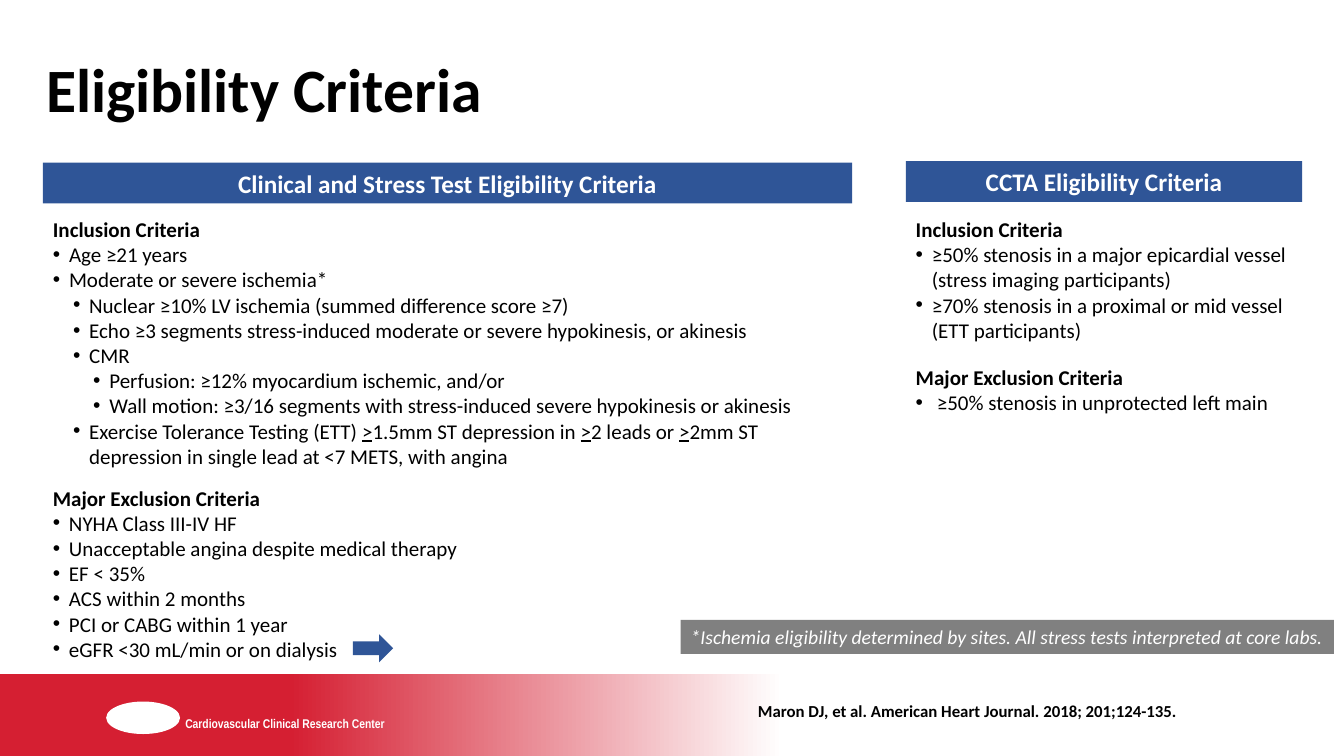
from lxml import etree
from pptx import Presentation
from pptx.dml.color import RGBColor
from pptx.enum.shapes import MSO_SHAPE
from pptx.enum.text import MSO_ANCHOR, PP_ALIGN
from pptx.oxml.ns import qn
from pptx.util import Inches, Pt

WIDE, HIGH = 13.33, 7.5
COL, ROW = WIDE / 100, HIGH / 100
COLORS = {"blue": "2F5597", "gray": "808080", "red": "D51F32",
          "white": "FFFFFF", "black": "000000"}

CLINIC_IN = [
    (0, "Age ≥21 years"),
    (0, "Moderate or severe ischemia*"),
    (1, "Nuclear ≥10% LV ischemia (summed difference score ≥7)"),
    (1, "Echo ≥3 segments stress-induced moderate or severe hypokinesis, or akinesis"),
    (1, "CMR"),
    (2, "Perfusion: ≥12% myocardium ischemic, and/or"),
    (2, "Wall motion: ≥3/16 segments with stress-induced severe hypokinesis or akinesis"),
    (1, "Exercise Tolerance Testing (ETT) _>_1.5mm ST depression in _>_2 leads or "
        "_>_2mm ST depression in single lead at <7 METS, with angina"),
]
CLINIC_OUT = [(0, text) for text in (
    "NYHA Class III-IV HF", "Unacceptable angina despite medical therapy",
    "EF < 35%", "ACS within 2 months", "PCI or CABG within 1 year",
    "eGFR <30 mL/min or on dialysis")]
CCTA_IN = [
    (0, "≥50% stenosis in a major epicardial vessel (stress imaging participants)"),
    (0, "≥70% stenosis in a proximal or mid vessel (ETT participants)"),
]
CCTA_OUT = [(0, "≥50% stenosis in unprotected left main")]


def color(name):
    return RGBColor.from_string(COLORS[name])


def place(box):
    """Turn a box in grid columns and rows into slide lengths."""
    x, y, w, h = box
    return Inches(x * COL), Inches(y * ROW), Inches(w * COL), Inches(h * ROW)


def style(font, size, tint, bold=False, italic=False, face="Calibri"):
    font.name, font.size = face, Pt(size)
    font.bold, font.italic = bold, italic
    font.color.rgb = color(tint)


def add_block(slide, box, fill, kind=MSO_SHAPE.RECTANGLE):
    block = slide.shapes.add_shape(kind, *place(box))
    block.shadow.inherit = False
    block.line.fill.background()
    if fill:
        block.fill.solid()
        block.fill.fore_color.rgb = color(fill)
    return block


def add_text(slide, box):
    frame = slide.shapes.add_textbox(*place(box)).text_frame
    frame.word_wrap = True
    return frame


def write(frame, text, size, tint, align=PP_ALIGN.LEFT, **look):
    frame.text = text
    para = frame.paragraphs[0]
    para.alignment = align
    style(para.runs[0].font, size, tint, **look)
    return para


def add_bullet(para, level, hang):
    props = para._p.get_or_add_pPr()
    props.set("marL", str(Inches(hang + 0.2 * level)))
    props.set("indent", str(Inches(-hang)))
    etree.SubElement(props, qn("a:buFont")).set("typeface", "Arial")
    etree.SubElement(props, qn("a:buChar")).set("char", "•")


def add_list(slide, box, head, items, hang=0.16):
    """Write a bold heading and bullets; text between underscores is underlined."""
    frame = add_text(slide, box)
    write(frame, head, 15, "black", bold=True)
    for level, text in items:
        para = frame.add_paragraph()
        para.level = level
        add_bullet(para, level, hang)
        for i, part in enumerate(text.split("_")):
            run = para.add_run()
            run.text = part
            style(run.font, 15, "black")
            run.font.underline = i % 2 == 1


def add_bar(slide, box, text):
    frame = add_block(slide, box, "blue").text_frame
    frame.word_wrap = True
    write(frame, text, 18, "white", PP_ALIGN.CENTER, bold=True)


def add_clinic(slide, box):
    x, y, w, h = box
    add_bar(slide, (x, y, w, 5.4), "Clinical and Stress Test Eligibility Criteria")
    add_list(slide, (x, y + 6.5, w, 35), "Inclusion Criteria", CLINIC_IN)
    add_list(slide, (x, y + 42, 32.1, h - 42), "Major Exclusion Criteria", CLINIC_OUT)
    add_block(slide, (x + 23.05, y + 62.4, 3, 3.7), "blue", MSO_SHAPE.RIGHT_ARROW)


def add_ccta(slide, box):
    x, y, w, h = box
    add_bar(slide, (x, y, w, 5.4), "CCTA Eligibility Criteria")
    add_list(slide, (x, y + 6.7, w, 18.1), "Inclusion Criteria", CCTA_IN)
    add_list(slide, (x, y + 26.2, w, h - 26.2), "Major Exclusion Criteria",
             CCTA_OUT, hang=0.21)


def add_title(slide, box):
    frame = add_text(slide, box)
    frame.vertical_anchor = MSO_ANCHOR.MIDDLE
    para = write(frame, "Eligibility Criteria", 44, "black", bold=True)
    para.line_spacing = 0.9


def add_note(slide, box):
    frame = add_block(slide, box, "gray").text_frame
    frame.word_wrap = True
    write(frame, "*Ischemia eligibility determined by sites. "
          "All stress tests interpreted at core labs.", 14, "white", italic=True)


def add_footer(slide, box):
    x, y, w, h = box
    band = add_block(slide, (x, y, 58.3, h), None)
    band.fill.gradient()
    band.fill.gradient_angle = 180
    stops = zip(band.fill.gradient_stops, ((0, "white"), (0.63, "red")))
    for stop, (spot, tint) in stops:
        stop.position = spot
        stop.color.rgb = color(tint)
    add_block(slide, (x + 7.9, y + 3.6, 5.5, 4.3), "white", MSO_SHAPE.OVAL)
    write(add_text(slide, (x + 13.05, y + 4.9, 18, 2)),
          "Cardiovascular Clinical Research Center", 9, "white",
          bold=True, face="Arial Narrow")
    write(add_text(slide, (x + 55.65, y + 2.9, 34.3, 4)),
          "Maron DJ, et al. American Heart Journal. 2018; 201;124-135.",
          12, "black", bold=True)


def main():
    deck = Presentation()
    deck.slide_width, deck.slide_height = Inches(WIDE), Inches(HIGH)
    slide = deck.slides.add_slide(deck.slide_layouts[6])
    add_footer(slide, (0, 89.2, 100, 10.8))
    add_title(slide, (2.7, 5.3, 93.1, 14))
    add_clinic(slide, (3.2, 21.5, 60.2, 66.9))
    add_ccta(slide, (67.4, 21.3, 29.5, 34.3))
    add_note(slide, (50.65, 82, 48.6, 4.5))
    deck.save("out.pptx")


if __name__ == "__main__":
    main()
